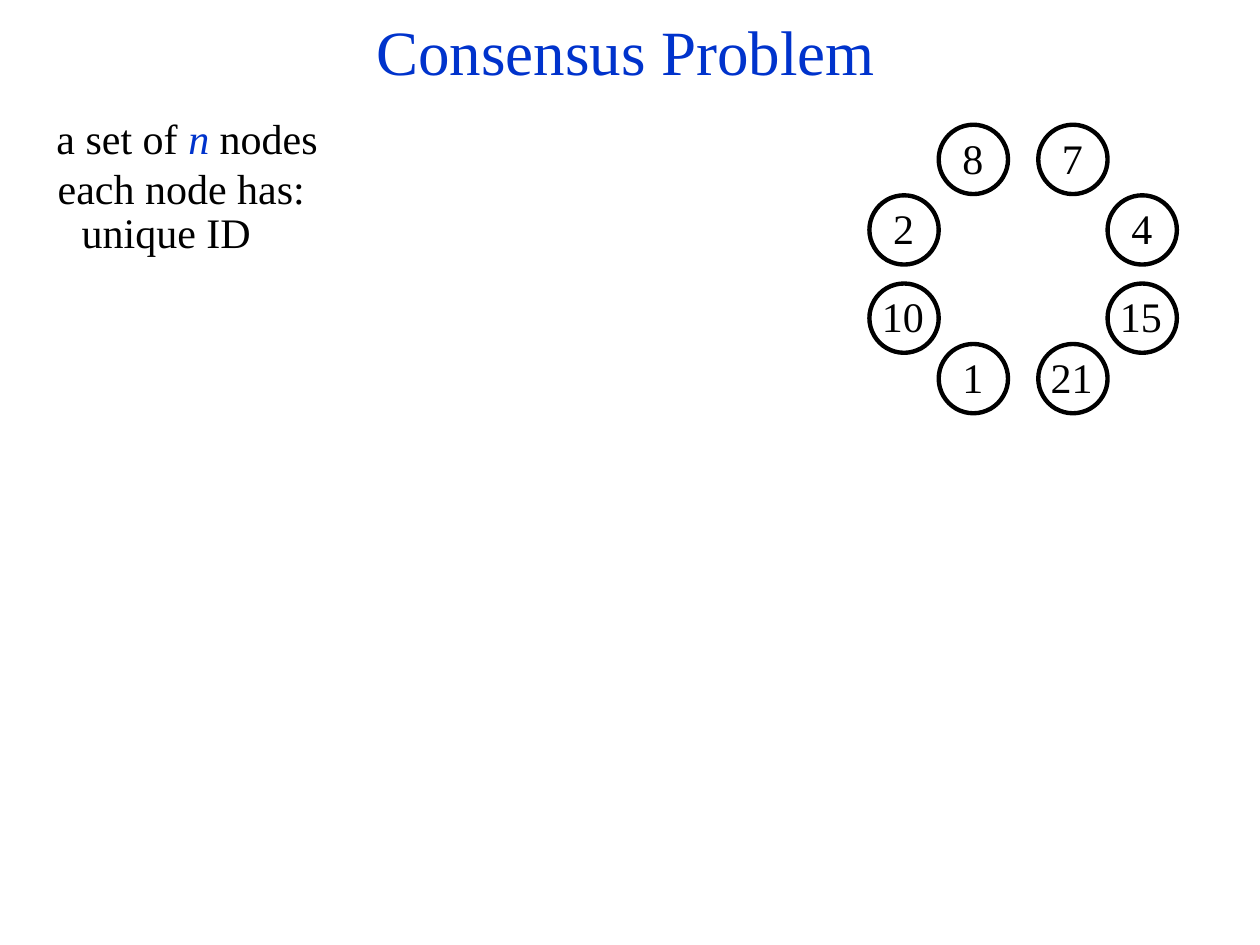
"""Build the Consensus Problem slide: node properties beside a ring of numbered nodes."""
from pptx import Presentation
from pptx import util as u
from pptx.dml.color import RGBColor
from pptx.enum import shapes, text

THEME = {
    "font": "Times New Roman",
    "ink": RGBColor(0, 0, 0),
    "accent": RGBColor(0x00, 0x33, 0xCC),
    "paper": RGBColor(255, 255, 255),
    "title": 36,
    "body": 24,
    "outline": 2.5,
}

TITLE = "Consensus Problem"
STATEMENTS = [
    (["a set of ", "n", " nodes"], (0.35, 0.84, 3.23, 0.5)),
    (["each node has:"], (0.36, 1.24, 2.28, 0.5)),
    (["unique ID"], (0.55, 1.59, 1.56, 0.5)),
]
VARIABLE = "n"

COLUMNS = [6.9, 7.45, 8.24, 8.79]
ROWS = [0.99, 1.55, 2.25, 2.73]
DIAMETER = 0.55
RING = [
    (None, "8", "7", None),
    ("2", None, None, "4"),
    ("10", None, None, "15"),
    (None, "1", "21", None),
]


def add_words(slide, words, box, size, color, align=None):
    label = slide.shapes.add_textbox(*map(u.Inches, box))
    frame = label.text_frame
    frame.word_wrap = True
    line = frame.paragraphs[0]
    line.alignment = align
    for word in words:
        run = line.add_run()
        run.text = word
        run.font.name = THEME["font"]
        run.font.size = u.Pt(size)
        run.font.color.rgb = THEME["accent"] if word == VARIABLE else color
        run.font.italic = word == VARIABLE


def add_node(slide, left, top):
    node = slide.shapes.add_shape(
        shapes.MSO_SHAPE.OVAL, *map(u.Inches, (left, top, DIAMETER, DIAMETER))
    )
    node.shadow.inherit = False
    node.fill.solid()
    node.fill.fore_color.rgb = THEME["paper"]
    node.line.color.rgb = THEME["ink"]
    node.line.width = u.Pt(THEME["outline"])


def add_node_id(slide, node_id, left, top):
    indent, width = (0.09, 0.48) if len(node_id) == 1 else (0, 0.62)
    box = (left + indent, top + 0.01, width, 0.5)
    add_words(slide, [node_id], box, THEME["body"], THEME["ink"])


def main():
    deck = Presentation()
    deck.slide_width, deck.slide_height = u.Inches(10), u.Inches(7.5)
    slide = deck.slides.add_slide(deck.slide_layouts[6])
    add_words(slide, [TITLE], (0.12, 0.05, 9.69, 0.71), THEME["title"],
              THEME["accent"], text.PP_ALIGN.CENTER)
    for words, box in STATEMENTS:
        add_words(slide, words, box, THEME["body"], THEME["ink"])
    nodes = [
        (node_id, left, top)
        for top, ids in zip(ROWS, RING)
        for left, node_id in zip(COLUMNS, ids)
        if node_id
    ]
    for _, left, top in nodes:
        add_node(slide, left, top)
    for node in nodes:
        add_node_id(slide, *node)
    deck.save("out.pptx")


if __name__ == "__main__":
    main()
